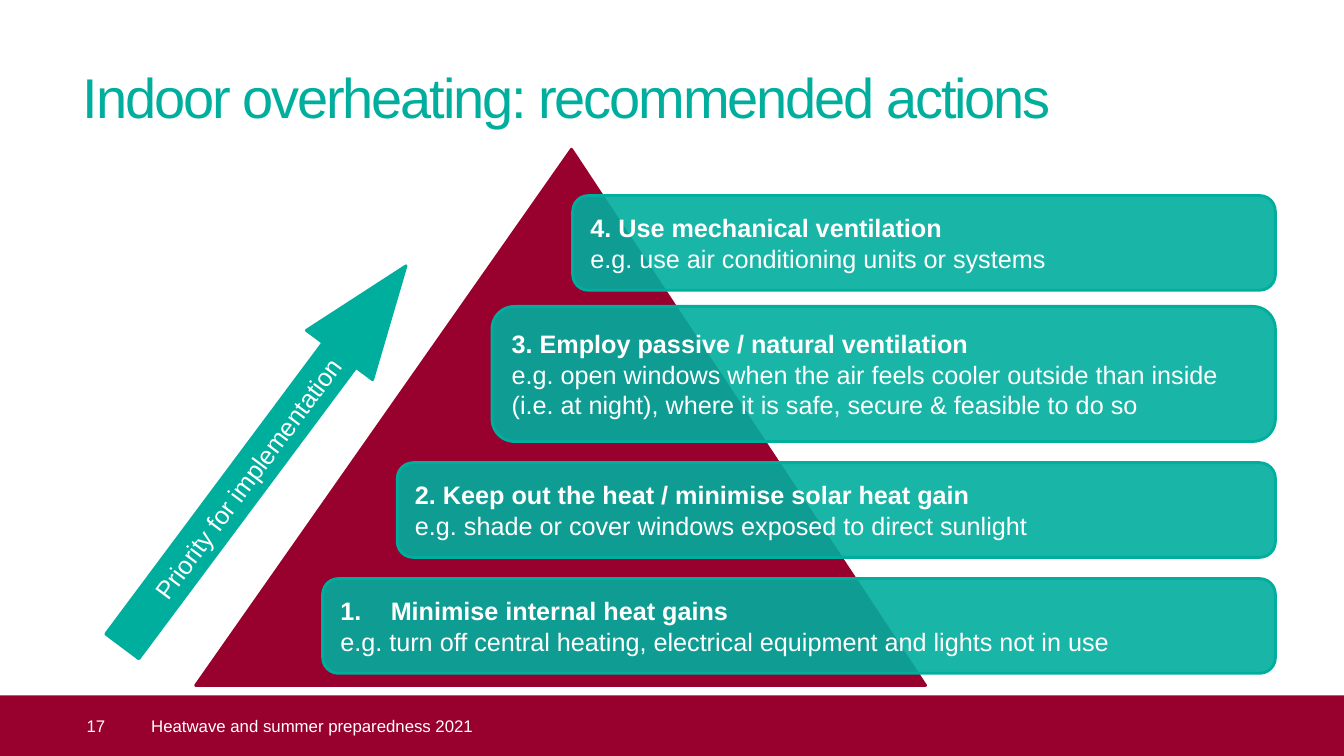
from lxml.etree import SubElement
from pptx import Presentation
from pptx.dml.color import RGBColor
from pptx.enum.shapes import MSO_SHAPE as Shape
from pptx.enum.text import MSO_ANCHOR as Anchor, MSO_AUTO_SIZE as AutoSize, PP_ALIGN as Align
from pptx.oxml.ns import qn
from pptx.util import Inches, Pt

COLORS = {"teal": "00AE9E", "crimson": "98002E", "white": "FFFFFF"}
ACTION_RIGHT = 12.65
ACTIONS = [
    (4.88, 3.04, 1.34, "3. Employ passive / natural ventilation",
     "e.g. open windows when the air feels cooler outside than inside "
     "(i.e. at night), where it is safe, secure & feasible to do so"),
    (3.94, 4.59, 0.94, "2. Keep out the heat / minimise solar heat gain",
     "e.g. shade or cover windows exposed to direct sunlight"),
    (3.2, 5.74, 0.94, "Minimise internal heat gains",
     "e.g. turn off central heating, electrical equipment and lights not in use"),
    (5.68, 1.94, 0.94, "4. Use mechanical ventilation",
     "e.g. use air conditioning units or systems"),
]


def color(name):
    return RGBColor.from_string(COLORS[name])


def add_shape(page, kind, box, fill, outlined=True):
    shape = page.shapes.add_shape(kind, *map(Inches, box))
    shape.shadow.inherit = False
    shape.fill.solid()
    shape.fill.fore_color.rgb = color(fill)
    if outlined:
        shape.line.color.rgb = color(fill)
        shape.line.width = Pt(2)
    else:
        shape.line.fill.background()
    return shape


def set_frame(frame, insets, anchor=Anchor.MIDDLE):
    frame.word_wrap = True
    frame.auto_size = AutoSize.NONE
    frame.vertical_anchor = anchor
    (frame.margin_left, frame.margin_top,
     frame.margin_right, frame.margin_bottom) = map(Inches, insets)


def set_para(para, text, size, name="white", bold=False, align=Align.LEFT):
    para.text = text
    para.alignment = align
    span = para.runs[0]
    span.font.name = "Arial"
    span.font.size = Pt(size)
    span.font.bold = bold
    span.font.color.rgb = color(name)
    return span


def indent(para, left, first=0):
    props = para._p.get_or_add_pPr()
    props.set("marL", str(Inches(left)))
    props.set("indent", str(Inches(first)))
    return props


def add_title(page, box):
    title = page.shapes.title
    title.left, title.top, title.width, title.height = map(Inches, box)
    set_frame(title.text_frame, (0, 0, 0, 0))
    span = set_para(title.text_frame.paragraphs[0],
                    "Indoor overheating: recommended actions", 40, "teal")
    span._r.get_or_add_rPr().set("spc", "-150")


def add_footer(page, box):
    left, top, width, height = box
    band = add_shape(page, Shape.RECTANGLE, box, "crimson", outlined=False)
    label = page.shapes.add_textbox(
        *map(Inches, (left + 1.31, top, width - 1.57, height)))
    for holder, text, offset in ((band, "17", 0.86),
                                 (label, "Heatwave and summer preparedness 2021", 0.19)):
        set_frame(holder.text_frame, (0, 0, 0, 0))
        para = holder.text_frame.paragraphs[0]
        set_para(para, text, 12)
        indent(para, offset)


def add_action(page, box, heading, example):
    panel = add_shape(page, Shape.ROUNDED_RECTANGLE, box, "teal")
    fill = panel.fill._xPr.find(qn("a:solidFill"))
    SubElement(fill[0], qn("a:alpha"), val="90000")
    frame = panel.text_frame
    set_frame(frame, (0.13, 0.07, 0.13, 0.07))
    head = frame.paragraphs[0]
    set_para(head, heading, 18, bold=True)
    set_para(frame.add_paragraph(), example, 18)
    if not heading[0].isdigit():
        SubElement(indent(head, 0.5, -0.5), qn("a:buAutoNum"), type="arabicPeriod")


def add_pyramid(page, box):
    pyramid = add_shape(page, Shape.ISOSCELES_TRIANGLE, box, "crimson")
    pyramid.adjustments[0] = 0.515
    for left, top, height, heading, example in ACTIONS:
        add_action(page, (left, top, ACTION_RIGHT - left, height), heading, example)


def add_priority_arrow(page, box):
    arrow = add_shape(page, Shape.UP_ARROW, box, "teal")
    arrow.adjustments[0] = 0.5
    arrow.adjustments[1] = 1.348
    arrow.rotation = 36.7
    frame = arrow.text_frame
    set_frame(frame, (0.1, 0.05, 0.1, 0.05))
    frame._txBody.bodyPr.set("vert", "vert270")
    set_para(frame.paragraphs[0], "Priority for implementation", 18, align=Align.CENTER)


def main():
    deck = Presentation()
    deck.slide_width, deck.slide_height = Inches(13.33), Inches(7.5)
    page = deck.slides.add_slide(deck.slide_layouts[5])
    add_title(page, (0.82, 0.6, 11.71, 0.71))
    add_footer(page, (0, 6.9, 13.33, 0.6))
    add_pyramid(page, (1.94, 1.48, 7.24, 5.32))
    add_priority_arrow(page, (2.21, 2.17, 0.82, 4.71))
    deck.save("out.pptx")


if __name__ == "__main__":
    main()
